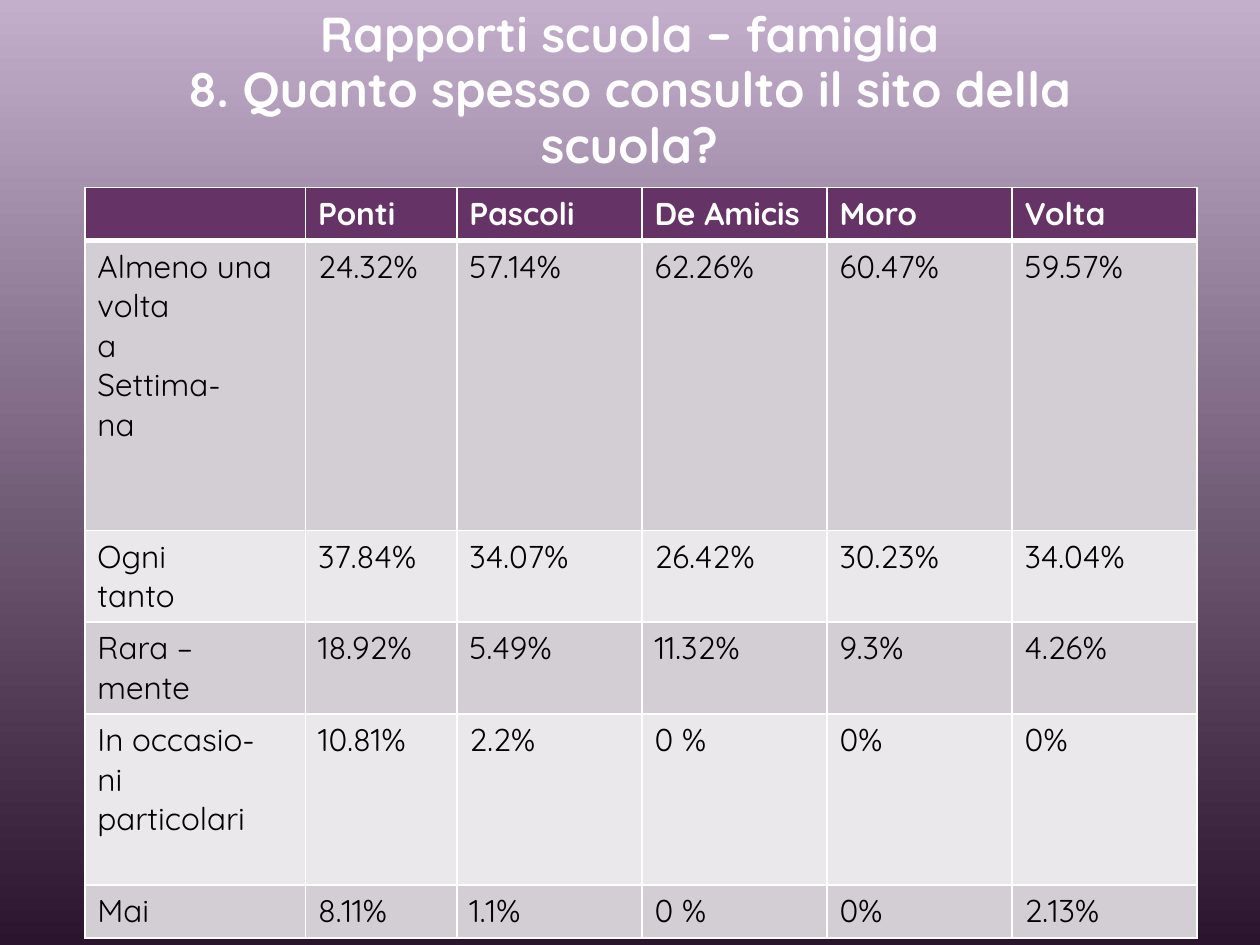
"""Build the slide on how often families consult the school website."""
from dataclasses import dataclass

from lxml import etree
from pptx import Presentation
from pptx import util as u
from pptx.dml.color import RGBColor
from pptx.enum import text
from pptx.oxml import ns


@dataclass(frozen=True)
class Theme:
    font: str = "Quicksand"
    title_size: int = 28
    table_size: int = 18
    light: str = "FFFFFF"
    dark: str = "000000"
    header: str = "663366"
    bands: tuple = ("D3CED3", "EAE8EA")
    sky: tuple = ("C3AFCC", "2B142D")
    rule: int = 1
    header_rule: int = 3


@dataclass(frozen=True)
class Answer:
    label: str
    shares: tuple
    height: float


THEME = Theme()
TITLE = "Rapporti scuola – famiglia\v8. Quanto spesso consulto il sito della scuola?"
SCHOOLS = Answer("", ("Ponti", "Pascoli", "De Amicis", "Moro", "Volta"), 1.07)
ANSWERS = (
    Answer("Almeno una\nvolta\na\nSettima-\nna",
           ("24.32%", "57.14%", "62.26%", "60.47%", "59.57%"), 5.84),
    Answer("Ogni\ntanto", ("37.84%", "34.07%", "26.42%", "30.23%", "34.04%"), 1.85),
    Answer("Rara –\nmente", ("18.92%", "5.49%", "11.32%", "9.3%", "4.26%"), 1.85),
    Answer("In occasio-\nni\nparticolari", ("10.81%", "2.2%", "0 %", "0%", "0%"), 3.45),
    Answer("Mai", ("8.11%", "1.1%", "0 %", "0%", "2.13%"), 1.07),
)
COLUMN_WIDTHS = (4.45, 3.05) + (3.73,) * 4


def write(frame, words: str, *, size: int, color: str, bold: bool = False,
          align=text.PP_ALIGN.LEFT, spacing: float = 1.0) -> None:
    frame.text = words
    for paragraph in frame.paragraphs:
        paragraph.alignment = align
        paragraph.line_spacing = spacing
        for run in paragraph.runs:
            run.font.name = THEME.font
            run.font.size = u.Pt(size)
            run.font.bold = bold
            run.font.color.rgb = RGBColor.from_string(color)


def rule_cell(cell, top: int, bottom: int) -> None:
    properties = cell._tc.get_or_add_tcPr()
    widths = {"L": THEME.rule, "R": THEME.rule, "T": top, "B": bottom}
    for side, points in widths.items():
        line = etree.SubElement(properties, ns.qn(f"a:ln{side}"), w=str(u.Pt(points)))
        fill = etree.SubElement(line, ns.qn("a:solidFill"))
        etree.SubElement(fill, ns.qn("a:srgbClr"), val=THEME.light)


def fill_row(table, index: int, answer: Answer) -> None:
    is_header = index == 0
    fill = THEME.header if is_header else THEME.bands[(index - 1) % 2]
    top = THEME.header_rule if index == 1 else THEME.rule
    bottom = THEME.header_rule if is_header else THEME.rule
    table.rows[index].height = u.Cm(answer.height)
    for column, words in enumerate((answer.label, *answer.shares)):
        cell = table.cell(index, column)
        rule_cell(cell, top, bottom)
        cell.fill.solid()
        cell.fill.fore_color.rgb = RGBColor.from_string(fill)
        if words:
            write(cell.text_frame, words, size=THEME.table_size, bold=is_header,
                  color=THEME.light if is_header else THEME.dark)


def paint_background(slide) -> None:
    sky = slide.background.fill
    sky.gradient()
    sky.gradient_angle = 270
    for stop, color in zip(sky.gradient_stops, THEME.sky):
        stop.color.rgb = RGBColor.from_string(color)


def add_title(slide) -> None:
    heading = slide.shapes.add_textbox(u.Cm(2.16), u.Cm(0.25), u.Cm(21.06), u.Cm(3.18))
    frame = heading.text_frame
    frame.word_wrap = True
    frame.vertical_anchor = text.MSO_ANCHOR.MIDDLE
    write(frame, TITLE, size=THEME.title_size, color=THEME.light, bold=True,
          align=text.PP_ALIGN.CENTER, spacing=0.95)


def add_results(slide) -> None:
    rows = (SCHOOLS, *ANSWERS)
    results = slide.shapes.add_table(
        len(rows), len(COLUMN_WIDTHS), u.Cm(1.71), u.Cm(3.78),
        u.Cm(sum(COLUMN_WIDTHS)), u.Cm(sum(row.height for row in rows))).table
    for column, width in zip(results.columns, COLUMN_WIDTHS):
        column.width = u.Cm(width)
    for index, answer in enumerate(rows):
        fill_row(results, index, answer)


def main() -> None:
    deck = Presentation()
    deck.slide_width, deck.slide_height = u.Cm(25.4), u.Cm(19.05)
    slide = deck.slides.add_slide(deck.slide_layouts[6])
    paint_background(slide)
    add_title(slide)
    add_results(slide)
    deck.save("out.pptx")


if __name__ == "__main__":
    main()
